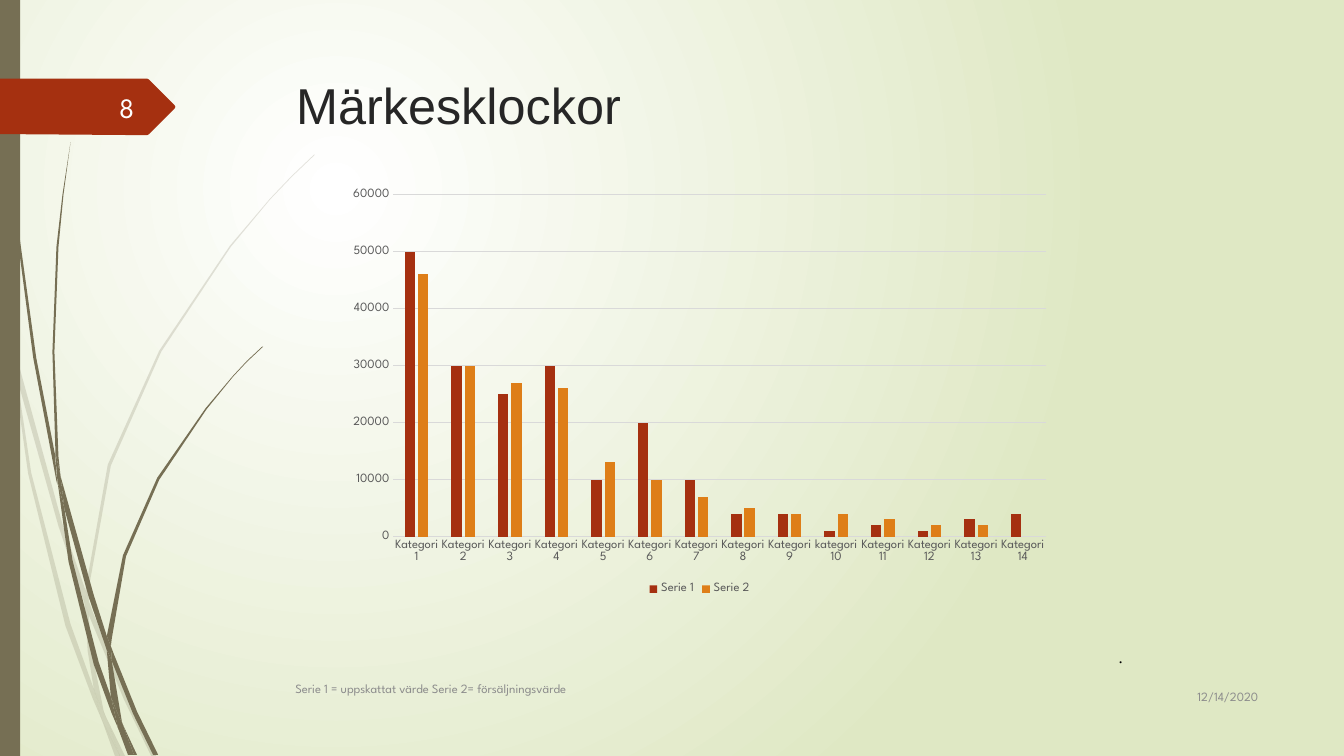
import lxml.etree
import pptx
import pptx.chart.data
import pptx.dml.color
import pptx.enum.chart
import pptx.enum.shapes
import pptx.enum.text
import pptx.oxml
import pptx.oxml.ns
import pptx.util

Pt = pptx.util.Pt
ALIGN = pptx.enum.text.PP_ALIGN
ANCHOR = pptx.enum.text.MSO_ANCHOR
BODY_FONT = "League Spartan"
OLIVE, RUST, ORANGE = "766F54", "A53010", "DE7E18"
GREY, DARK_GREY, GRID = "8C8C8C", "595959", "D9D9D9"

# Outline corners are counted in units of 0.72 points.
UNIT = Pt(0.72)
PALE_GRASS = [
    [(11, 350), (9, 322), (0, 282), (0, 299), (10, 344)],
    [(58, 522), (84, 599), (85, 586), (62, 520), (14, 345), (17, 376)],
    [(92, 607), (88, 596), (88, 610), (123, 694), (150, 750), (155, 750), (127, 692)],
    [(119, 750), (124, 750), (105, 711)],
    [(93, 683), (70, 619), (31, 469), (17, 376), (11, 350), (28, 470), (65, 621),
     (92, 693), (101, 714), (99, 707)],
    [(84, 599), (87, 646), (93, 683), (96, 692), (105, 711), (103, 706), (91, 646),
     (88, 610), (88, 608)],
    [(88, 584), (110, 462), (160, 349), (229, 245), (268, 198), (290, 175), (312, 154),
     (312, 153), (289, 175), (268, 197), (228, 244), (158, 348), (107, 461), (85, 584),
     (85, 586), (88, 596)],
    [(101, 714), (114, 750), (119, 750)],
    [(88, 608), (88, 610), (88, 596), (85, 586), (84, 599)],
    [(96, 692), (93, 683), (99, 707), (101, 714), (119, 750), (105, 711)],
]
DARK_GRASS = [
    [(7, 110), (17, 233), (33, 355), (56, 477), (57, 481), (55, 457), (55, 453), (36, 355),
     (19, 232), (8, 109), (5, 48), (4, 0), (3, 0), (4, 48)],
    [(88, 592), (106, 645), (106, 633), (106, 631), (93, 590), (60, 472), (64, 505)],
    [(113, 649), (110, 641), (111, 656), (132, 708), (152, 749), (157, 749), (136, 706)],
    [(110, 691), (98, 657), (72, 556), (64, 505), (57, 477), (68, 557), (93, 659),
     (111, 708), (117, 722), (116, 717)],
    [(60, 472), (58, 453), (54, 349), (58, 245), (63, 193), (70, 141), (62, 193),
     (56, 245), (52, 349), (55, 449)],
    [(133, 749), (136, 749), (122, 719)],
    [(57, 477), (64, 505), (60, 472), (55, 449), (55, 453)],
    [(111, 633), (125, 552), (158, 476), (205, 406), (231, 374), (245, 359), (261, 344),
     (260, 344), (245, 358), (231, 373), (204, 405), (156, 474), (122, 551), (106, 631),
     (110, 641)],
    [(117, 722), (127, 749), (131, 749)],
    [(106, 645), (110, 691), (116, 706), (122, 719), (121, 716), (111, 656), (109, 651)],
    [(106, 645), (109, 651), (111, 656), (110, 641), (106, 631), (106, 633)],
    [(116, 706), (110, 691), (116, 717), (117, 722), (130, 749), (133, 749), (122, 719)],
]
BADGE = [(0, 0), (136, 0), (146, 0), (148, 1), (173, 26), (174, 28), (173, 30),
         (148, 55), (146, 56), (136, 56), (0, 55)]

SERIE_1 = [50000, 30000, 25000, 30000, 10000, 20000, 10000,
           4000, 4000, 1000, 2000, 1000, 3000, 4000]
SERIE_2 = [46000, 30000, 27000, 26000, 13000, 10000, 7000,
           5000, 4000, 4000, 3000, 2000, 2000, None]


def color(value):
    return pptx.dml.color.RGBColor.from_string(value)


def style_font(font, size, value, name=BODY_FONT):
    font.size, font.name = Pt(size), name
    font.color.rgb = color(value)


def paint(shape, value, opacity=100):
    shape.shadow.inherit = False
    shape.fill.solid()
    shape.fill.fore_color.rgb = color(value)
    shape.line.fill.background()
    if opacity < 100:
        tint = shape.fill._xPr.find(".//" + pptx.oxml.ns.qn("a:srgbClr"))
        alpha = lxml.etree.SubElement(tint, pptx.oxml.ns.qn("a:alpha"))
        alpha.set("val", str(opacity * 1000))


def paint_background(page):
    fill = page.background.fill
    fill.gradient()
    for stop, value in zip(fill.gradient_stops, ("FFFFFF", "DFE8C4")):
        stop.color.rgb = color(value)
    gradient = page.background._cSld.find(".//" + pptx.oxml.ns.qn("a:gradFill"))
    linear = gradient.find(pptx.oxml.ns.qn("a:lin"))
    circle = pptx.oxml.parse_xml(
        f'<a:path {pptx.oxml.ns.nsdecls("a")} path="circle">'
        '<a:fillToRect l="50000" t="50000" r="100000" b="100000"/></a:path>')
    gradient.replace(linear, circle)


def add_outline(page, left, top, corners, value, opacity=100):
    points = [(Pt(left) + x * UNIT, Pt(top) + y * UNIT) for x, y in corners]
    builder = page.shapes.build_freeform(*points[0])
    builder.add_line_segments(points[1:], close=True)
    paint(builder.convert_to_shape(), value, opacity)


def add_grass(page, left, top):
    for pieces, opacity in ((PALE_GRASS, 20), (DARK_GRASS, 100)):
        for corners in pieces:
            add_outline(page, left, top, corners, OLIVE, opacity)


def add_side_bar(page, left, top, width, height):
    bar = page.shapes.add_shape(pptx.enum.shapes.MSO_SHAPE.RECTANGLE,
                                Pt(left), Pt(top), Pt(width), Pt(height))
    paint(bar, OLIVE)


def add_text(page, left, top, width, height, text, size, value, align=ALIGN.LEFT,
             anchor=ANCHOR.MIDDLE, name=BODY_FONT, wrap=True):
    box = page.shapes.add_textbox(Pt(left), Pt(top), Pt(width), Pt(height))
    frame = box.text_frame
    frame.word_wrap, frame.vertical_anchor = wrap, anchor
    para = frame.paragraphs[0]
    para.alignment = align
    span = para.add_run()
    span.text = text
    style_font(span.font, size, value, name)


def add_number_badge(page, left, top):
    add_outline(page, left, top, BADGE, RUST)
    add_text(page, left + 41.8, top + 5.8, 61.2, 28.8, "8", 20, "FEFFFF", ALIGN.RIGHT)


def set_title(page, left, top, width, height, text):
    title = page.shapes.title
    title.left, title.top, title.width, title.height = map(Pt, (left, top, width, height))
    frame = title.text_frame
    frame.word_wrap, frame.vertical_anchor = True, ANCHOR.TOP
    para = frame.paragraphs[0]
    para.alignment = ALIGN.LEFT
    span = para.add_run()
    span.text = text
    style_font(span.font, 36, "262626", "Arial")


def add_value_chart(page, left, top, width, height):
    kinds = pptx.enum.chart
    data = pptx.chart.data.CategoryChartData()
    data.categories = [f"{'kategori' if n == 10 else 'Kategori'} {n}" for n in range(1, 15)]
    data.add_series("Serie 1", SERIE_1)
    data.add_series("Serie 2", SERIE_2)
    chart = page.shapes.add_chart(kinds.XL_CHART_TYPE.COLUMN_CLUSTERED, Pt(left), Pt(top),
                                  Pt(width), Pt(height), data).chart
    style_font(chart.font, 10, "000000")
    chart.has_title = False
    chart.has_legend = True
    chart.legend.position = kinds.XL_LEGEND_POSITION.BOTTOM
    chart.legend.include_in_layout = False
    style_font(chart.legend.font, 9, DARK_GREY)
    plot = chart.plots[0]
    plot.gap_width, plot.overlap, plot.vary_by_categories = 219, -27, False
    for series, value in zip(plot.series, (RUST, ORANGE)):
        series.format.fill.solid()
        series.format.fill.fore_color.rgb = color(value)
    for axis in (chart.category_axis, chart.value_axis):
        axis.major_tick_mark = axis.minor_tick_mark = kinds.XL_TICK_MARK.NONE
        style_font(axis.tick_labels.font, 9, DARK_GREY)
    chart.value_axis.minimum_scale, chart.value_axis.maximum_scale = 0, 60000
    chart.value_axis.major_unit = 10000
    chart.value_axis.format.line.fill.background()
    for line in (chart.category_axis.format.line, chart.value_axis.major_gridlines.format.line):
        line.color.rgb = color(GRID)
        line.width = Pt(0.75)


def build_chart_slide(deck):
    page = deck.slides.add_slide(deck.slide_layouts[5])
    paint_background(page)
    add_grass(page, 0, 0)
    add_side_bar(page, 0, 0, 14.4, 540)
    add_number_badge(page, 0, 56.2)
    set_title(page, 204.3, 49, 702, 100.8, "Märkesklockor")
    add_value_chart(page, 242, 129, 515.5, 298.8)
    add_text(page, 792, 458.6, 17.3, 21.6, ".", 12, "000000", ALIGN.JUSTIFY,
             name="Times New Roman", wrap=False)
    add_text(page, 815.8, 482.4, 90, 29.5, "12/14/2020", 9, GREY, ALIGN.RIGHT)
    add_text(page, 203.8, 483, 600, 28.8,
             "Serie 1 = uppskattat värde Serie 2= försäljningsvärde", 9, GREY, anchor=ANCHOR.TOP)


def main():
    deck = pptx.Presentation()
    deck.slide_width, deck.slide_height = Pt(960), Pt(540)
    build_chart_slide(deck)
    deck.save("out.pptx")


if __name__ == "__main__":
    main()
